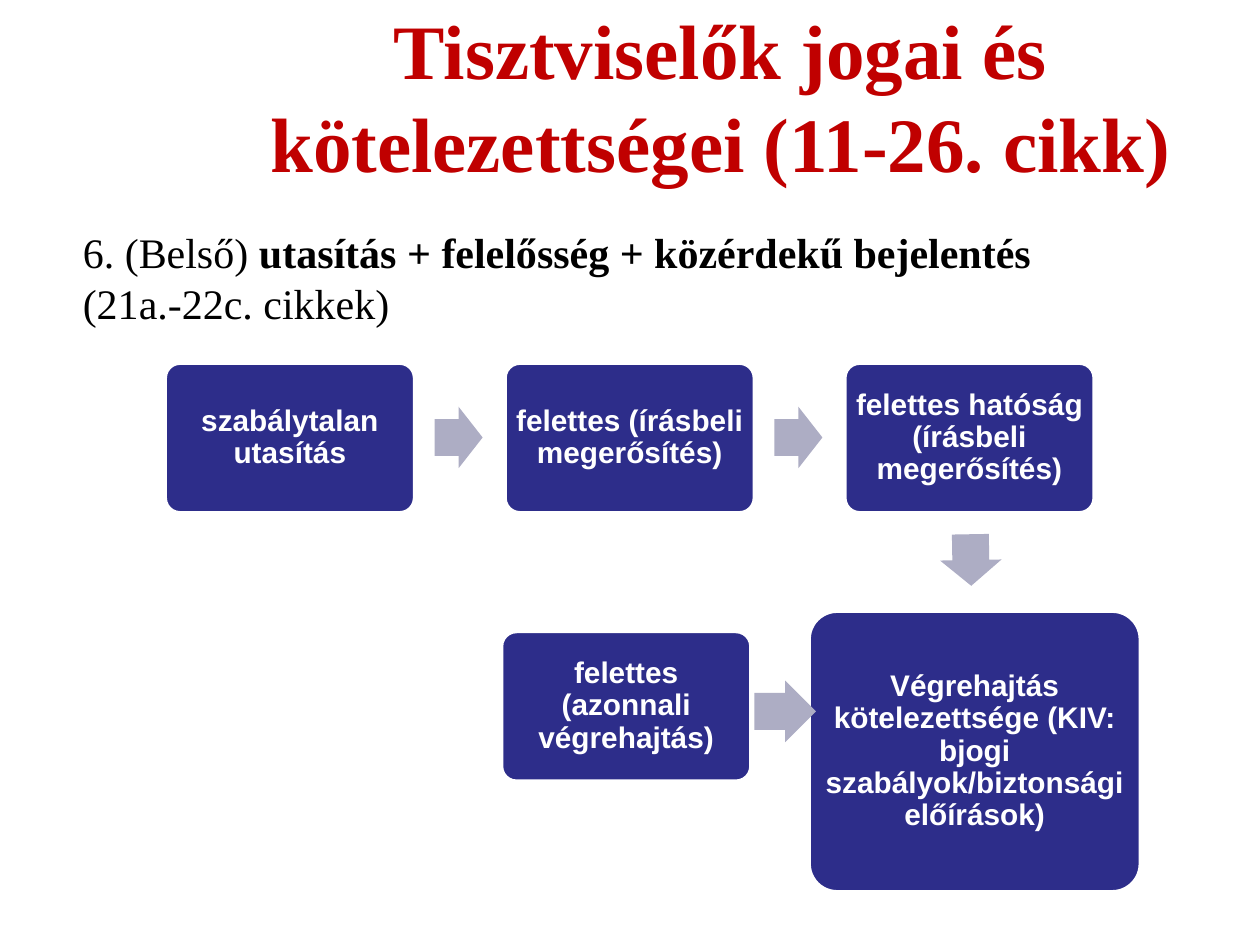
from pptx import Presentation
from pptx.dml.color import RGBColor
from pptx.enum.shapes import MSO_SHAPE as Shape
from pptx.enum.text import MSO_ANCHOR as Anchor, PP_ALIGN as Align
from pptx.util import Cm, Pt

COLORS = {"title": "C00000", "text": "000000", "box": "2D2D8A", "arrow": "ADADC4", "white": "FFFFFF"}


def add_run(paragraph, text, color, **font_format):
    run = paragraph.add_run()
    run.text = text
    run.font.color.rgb = RGBColor.from_string(COLORS[color])
    for name, value in font_format.items():
        setattr(run.font, name, value)


def add_filled(kind, bounds, color, adjustments):
    shape = slide.shapes.add_shape(kind, *map(Cm, bounds))
    shape.shadow.inherit = False
    shape.fill.solid()
    shape.fill.fore_color.rgb = RGBColor.from_string(COLORS[color])
    for index, value in enumerate(adjustments):
        shape.adjustments[index] = value
    return shape


presentation = Presentation()
presentation.slide_width = Cm(25.4)
presentation.slide_height = Cm(19.05)
slide = presentation.slides.add_slide(presentation.slide_layouts[6])

title = slide.shapes.add_textbox(Cm(3.1), Cm(0.33), Cm(22.86), Cm(3.18))
title.text_frame.word_wrap = True
title.text_frame.vertical_anchor = Anchor.MIDDLE
paragraph = title.text_frame.paragraphs[0]
paragraph.alignment = Align.CENTER
add_run(paragraph, "Tisztviselők jogai és kötelezettségei (11-26. cikk)", "title",
        name="Times New Roman", size=Pt(44), bold=True)

body = slide.shapes.add_textbox(Cm(1.27), Cm(4.45), Cm(22.86), Cm(12.57))
body.text_frame.word_wrap = True
body.text_frame.margin_left = Cm(0.4)
paragraph = body.text_frame.paragraphs[0]
for text, bold in [
    ("6. (Belső) ", False),
    ("utasítás + felelősség + közérdekű bejelentés ", True),
    ("(21a.-22c. cikkek)", False),
]:
    add_run(paragraph, text, "text", name="Times New Roman", size=Pt(24), bold=bold)

row_left, row_top, row_step = 3.33, 7.32, 6.85
box_size = (5.03, 3.02)
row_labels = ["szabálytalan utasítás", "felettes (írásbeli megerősítés)",
              "felettes hatóság (írásbeli megerősítés)"]
boxes = [(label, (row_left + index * row_step, row_top, *box_size))
         for index, label in enumerate(row_labels)]
boxes += [
    ("Végrehajtás kötelezettsége (KIV: bjogi szabályok/biztonsági előírások)",
     (16.31, 12.32, 6.68, 5.66)),
    ("felettes (azonnali végrehajtás)", (10.11, 12.73, *box_size)),
]
frame_format = {
    "word_wrap": True, "vertical_anchor": Anchor.MIDDLE,
    "margin_left": Cm(0.08), "margin_right": Cm(0.08),
    "margin_top": Cm(0.08), "margin_bottom": Cm(0.08),
}
for label, bounds in boxes:
    box = add_filled(Shape.ROUNDED_RECTANGLE, bounds, "box", [0.1])
    box.line.color.rgb = RGBColor.from_string(COLORS["white"])
    box.line.width = Pt(2.08)
    for name, value in frame_format.items():
        setattr(box.text_frame, name, value)
    paragraph = box.text_frame.paragraphs[0]
    paragraph.alignment = Align.CENTER
    paragraph.line_spacing = 0.9
    add_run(paragraph, label, "white", name="Arial", size=Pt(17), bold=True)

for bounds, rotation in [
    ((8.76, 8.2, 0.97, 1.24), 0),
    ((8.76 + row_step, 8.2, 0.97, 1.24), 0),
    ((19.05, 10.67, 1.04, 1.24), 89),
    ((15.21, 13.72, 1.24, 1.24), 0),
]:
    arrow = add_filled(Shape.RIGHT_ARROW, bounds, "arrow", [0.6, 0.5])
    arrow.line.fill.background()
    arrow.rotation = rotation

presentation.save("out.pptx")
